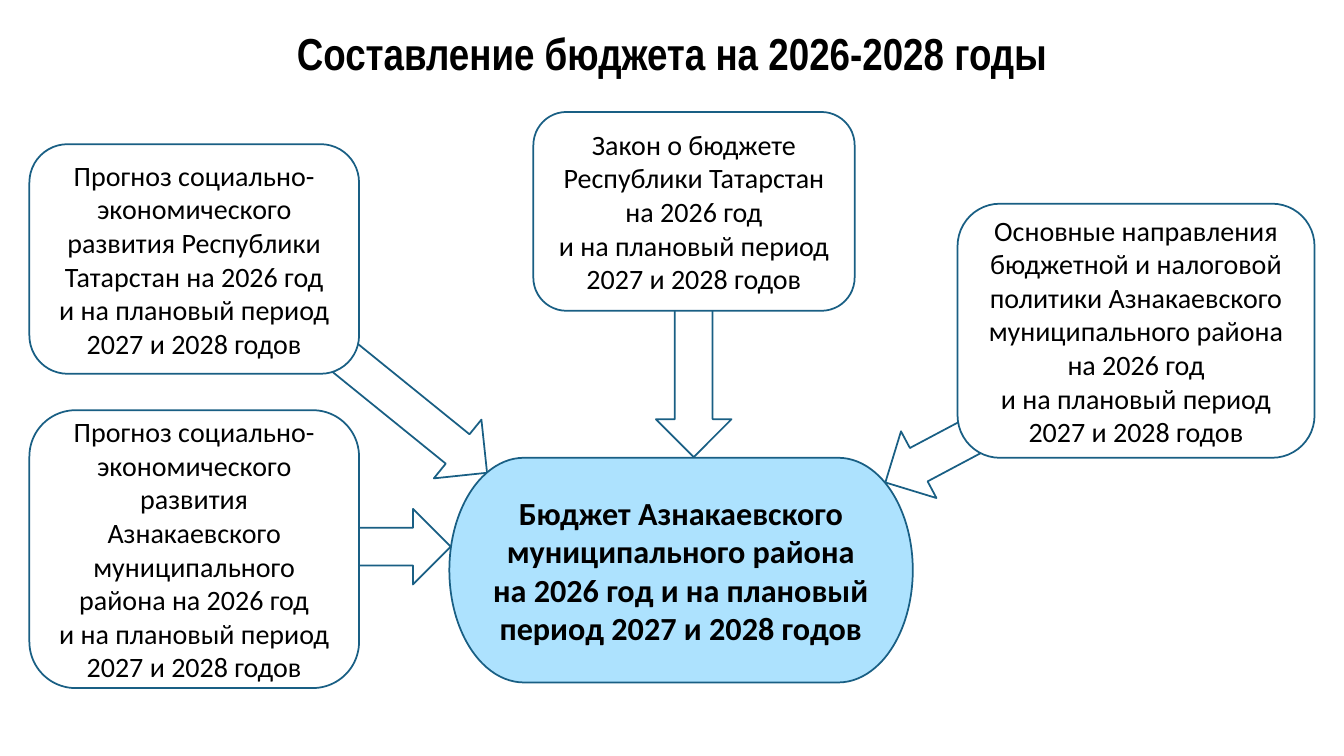
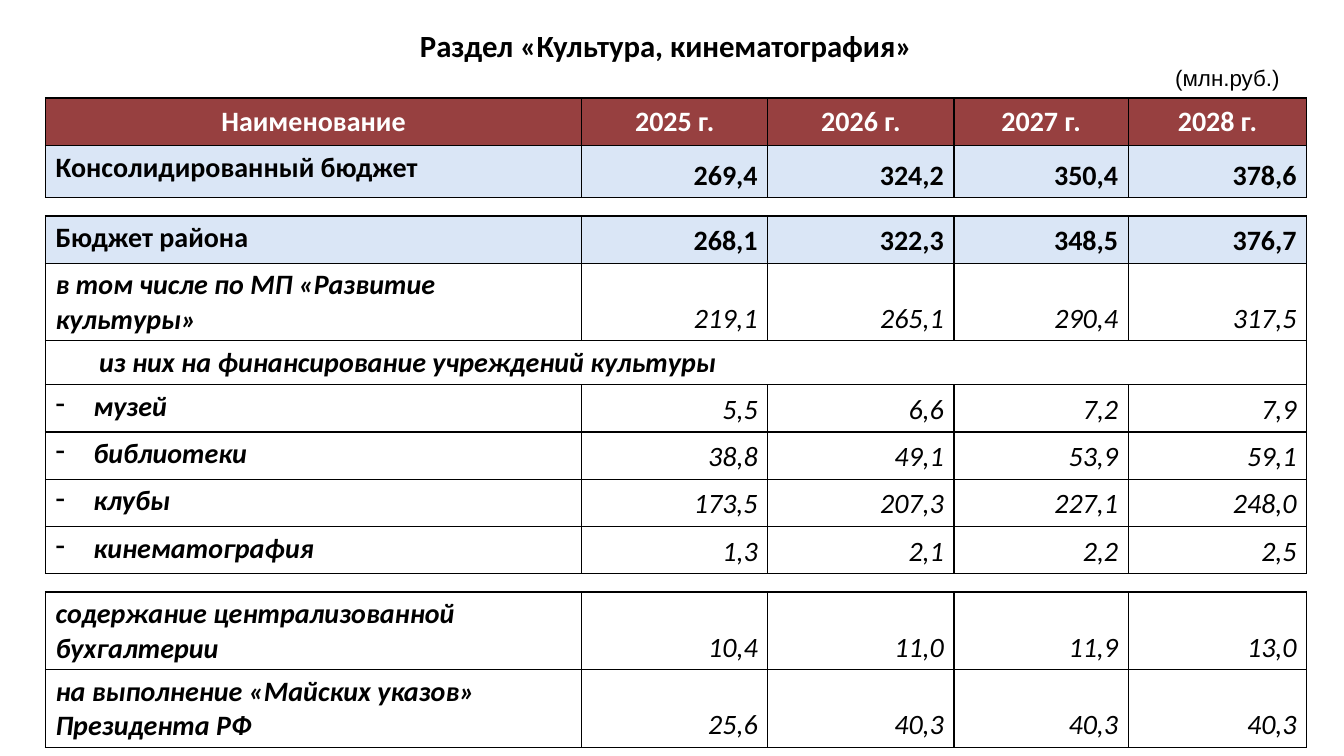
"""Builds two budget slides: the sources of the budget and the culture spending table."""
from dataclasses import dataclass
from typing import NamedTuple

from lxml.etree import SubElement
from pptx import Presentation
from pptx.dml.color import RGBColor
from pptx.enum.shapes import MSO_SHAPE as Preset
from pptx.enum.text import MSO_ANCHOR as Anchor, PP_ALIGN as Align
from pptx.oxml.ns import qn
from pptx.util import Pt


@dataclass(frozen=True)
class Theme:
    """Colours, fonts and type sizes shared by the slides."""
    black: str = "000000"
    white: str = "FFFFFF"
    outline: str = "195F84"
    budget: str = "ADE2FE"
    header: str = "974040"
    total: str = "DAE6F6"
    body_font: str = "Calibri"
    heading_font: str = "Arial Narrow"
    unit_font: str = "Arial"
    heading_size: float = 32
    budget_size: float = 23
    section_size: float = 22
    body_size: float = 20
    unit_size: float = 16
    spacer_size: float = 5
    outline_width: float = 1.25
    border_width: float = 1


THEME = Theme()


class Area(NamedTuple):
    """A place on the slide, in points."""
    left: float
    top: float
    width: float
    height: float


class Style(NamedTuple):
    """The look of a run."""
    size: float = THEME.body_size
    font: str = THEME.body_font
    bold: bool = False
    italic: bool = False
    colour: str = THEME.black


class Arrow(NamedTuple):
    """A block arrow pointing at the budget."""
    area: Area
    rotation: float = 0


class Box(NamedTuple):
    """A labelled outlined shape."""
    area: Area
    lines: tuple[str, ...]
    preset: Preset = Preset.ROUNDED_RECTANGLE
    fill: str = THEME.white
    style: Style = Style()


class Row(NamedTuple):
    """A table row; a row with neither label nor values is a gap."""
    height: float
    label: str = ""
    values: tuple[str, ...] = ()
    fill: str = THEME.white
    label_style: Style = Style(bold=True, italic=True)
    value_style: Style = Style(italic=True)
    indent: float = 0
    bullet: bool = False


PERIOD = "и на плановый период 2027 и 2028 годов"
LINE, TWO_LINES, GAP = 33.8, 55.5, 13
BOLD = Style(bold=True)
HEADER = Style(bold=True, colour=THEME.white)

ARROWS = (
    Arrow(Area(223, 266.5, 140.5, 54), 39),
    Arrow(Area(628, 300, 75, 54), 152),
    Arrow(Area(443, 247, 105, 54), 90),
    Arrow(Area(256.5, 363.5, 65.5, 54)),
)
BOXES = (
    Box(Area(321, 327, 331, 160.5),
        ("Бюджет Азнакаевского муниципального района",
         "на 2026 год и на плановый период 2027 и 2028 годов"),
        Preset.FLOWCHART_TERMINATOR, THEME.budget,
        Style(THEME.budget_size, bold=True)),
    Box(Area(381, 80, 229.5, 142),
        ("Закон о бюджете Республики Татарстан на 2026 год", PERIOD)),
    Box(Area(21, 103, 235.5, 164),
        ("Прогноз социально-экономического развития Республики Татарстан на 2026 год",
         PERIOD)),
    Box(Area(21, 293, 235.5, 198.5),
        ("Прогноз социально-экономического развития Азнакаевского "
         "муниципального района на 2026 год",
         "и на плановый период", "2027 и 2028 годов")),
    Box(Area(684, 145.5, 255, 181.5),
        ("Основные направления бюджетной и налоговой политики Азнакаевского "
         "муниципального района", "на 2026 год", PERIOD)),
)


def total_row(height: float, label: str, *values: str) -> Row:
    """Describe a highlighted total."""
    return Row(height, label, values, THEME.total, BOLD, BOLD)


def institution_row(label: str, *values: str) -> Row:
    """Describe a bulleted kind of institution."""
    return Row(LINE, label, values, indent=27, bullet=True)


COLUMNS = (383, 133, 133, 124.5, 127.5)
ROWS = (
    Row(LINE, "Наименование", tuple(f"{year} г." for year in range(2025, 2029)),
        THEME.header, HEADER, HEADER),
    total_row(37.5, "Консолидированный бюджет", "269,4", "324,2", "350,4", "378,6"),
    Row(GAP),
    total_row(LINE, "Бюджет района", "268,1", "322,3", "348,5", "376,7"),
    Row(TWO_LINES, "в том числе по МП «Развитие культуры»",
        ("219,1", "265,1", "290,4", "317,5")),
    Row(31, "из них на финансирование учреждений культуры", indent=31),
    institution_row("музей", "5,5", "6,6", "7,2", "7,9"),
    institution_row("библиотеки", "38,8", "49,1", "53,9", "59,1"),
    institution_row("клубы", "173,5", "207,3", "227,1", "248,0"),
    institution_row("кинематография", "1,3", "2,1", "2,2", "2,5"),
    Row(GAP),
    Row(TWO_LINES, "содержание централизованной бухгалтерии",
        ("10,4", "11,0", "11,9", "13,0")),
    Row(TWO_LINES, "на выполнение «Майских указов» Президента РФ",
        ("25,6", "40,3", "40,3", "40,3")),
)


def write(frame, lines: tuple[str, ...], style: Style, align=Align.CENTER) -> None:
    """Fill a text frame with one paragraph per line."""
    for index, line in enumerate(lines):
        paragraph = frame.add_paragraph() if index else frame.paragraphs[0]
        paragraph.alignment = align
        run = paragraph.add_run()
        run.text = line
        run.font.size = Pt(style.size)
        run.font.name = style.font
        run.font.bold = style.bold
        run.font.italic = style.italic
        run.font.color.rgb = RGBColor.from_string(style.colour)


def add_label(slide, area: Area, text: str, style: Style) -> None:
    """Add a centred line of free text."""
    frame = slide.shapes.add_textbox(*map(Pt, area)).text_frame
    frame.word_wrap = True
    write(frame, (text,), style)


def add_outlined(slide, preset: Preset, area: Area, fill: str):
    """Add a filled shape with the shared outline."""
    shape = slide.shapes.add_shape(preset, *map(Pt, area))
    shape.shadow.inherit = False
    shape.fill.solid()
    shape.fill.fore_color.rgb = RGBColor.from_string(fill)
    shape.line.color.rgb = RGBColor.from_string(THEME.outline)
    shape.line.width = Pt(THEME.outline_width)
    return shape


def add_arrow(slide, arrow: Arrow) -> None:
    """Draw a block arrow."""
    shape = add_outlined(slide, Preset.RIGHT_ARROW, arrow.area, THEME.white)
    shape.rotation = arrow.rotation


def add_box(slide, box: Box) -> None:
    """Draw a labelled shape."""
    frame = add_outlined(slide, box.preset, box.area, box.fill).text_frame
    frame.word_wrap = True
    frame.vertical_anchor = Anchor.MIDDLE
    write(frame, box.lines, box.style)


def set_borders(cell, sides: bool) -> None:
    """Rule a cell above and below, and at the sides if asked."""
    properties = cell._tc.get_or_add_tcPr()
    for edge in ("lnL", "lnR", "lnT", "lnB"):
        border = SubElement(properties, qn(f"a:{edge}"), w=str(Pt(THEME.border_width)))
        if sides or edge in ("lnT", "lnB"):
            ink = SubElement(border, qn("a:solidFill"))
            SubElement(ink, qn("a:srgbClr"), val=THEME.black)
        else:
            SubElement(border, qn("a:noFill"))


def indent_label(cell, row: Row) -> None:
    """Indent a row label, hanging a dash when it is bulleted."""
    properties = cell.text_frame.paragraphs[0]._p.get_or_add_pPr()
    properties.set("marL", str(Pt(row.indent)))
    if row.bullet:
        properties.set("indent", str(-Pt(row.indent)))
        SubElement(properties, qn("a:buChar"), char="-")


def shrink_gap(cell) -> None:
    """Let an empty cell be as low as its row."""
    cell.margin_top = cell.margin_bottom = 0
    SubElement(cell.text_frame.paragraphs[0]._p, qn("a:endParaRPr"),
               sz=str(int(THEME.spacer_size * 100)))


def fill_row(table, index: int, row: Row) -> None:
    """Set height, borders, fills and text of one table row."""
    table.rows[index].height = Pt(row.height)
    cells = [table.cell(index, column) for column in range(len(COLUMNS))]
    for cell in cells:
        set_borders(cell, bool(row.label))
        cell.fill.solid()
        cell.fill.fore_color.rgb = RGBColor.from_string(row.fill)
        if not row.label:
            shrink_gap(cell)
    if not row.label:
        return
    heading = row.label_style is HEADER
    write(cells[0].text_frame, (row.label,), row.label_style,
          Align.CENTER if heading else Align.LEFT)
    cells[0].vertical_anchor = Anchor.MIDDLE if heading else Anchor.TOP
    if row.indent:
        indent_label(cells[0], row)
    if not row.values:
        cells[0].merge(cells[-1])
    for cell, value in zip(cells[1:], row.values):
        write(cell.text_frame, (value,), row.value_style,
              Align.CENTER if heading else Align.RIGHT)
        cell.vertical_anchor = Anchor.MIDDLE if heading else Anchor.BOTTOM


def add_budget_table(slide) -> None:
    """Draw the culture spending table."""
    area = Area(32.5, 70, sum(COLUMNS), sum(row.height for row in ROWS))
    table = slide.shapes.add_table(len(ROWS), len(COLUMNS), *map(Pt, area)).table
    table.first_row = table.horz_banding = False
    for column, width in zip(table.columns, COLUMNS):
        column.width = Pt(width)
    for index, row in enumerate(ROWS):
        fill_row(table, index, row)


def main() -> None:
    """Build and save the presentation."""
    deck = Presentation()
    deck.slide_width, deck.slide_height = Pt(960), Pt(540)
    blank = deck.slide_layouts[6]

    sources = deck.slides.add_slide(blank)
    for arrow in ARROWS:
        add_arrow(sources, arrow)
    add_label(sources, Area(29.5, 15, 901.5, 46), "Составление бюджета на 2026-2028 годы",
              Style(THEME.heading_size, THEME.heading_font, bold=True))
    for box in BOXES:
        add_box(sources, box)

    culture = deck.slides.add_slide(blank)
    add_label(culture, Area(94.5, 15.5, 762.5, 34), "Раздел «Культура, кинематография»",
              Style(THEME.section_size, bold=True))
    add_label(culture, Area(811, 42.5, 131.5, 26.5), "(млн.руб.)",
              Style(THEME.unit_size, THEME.unit_font))
    add_budget_table(culture)

    deck.save("out.pptx")


if __name__ == "__main__":
    main()
